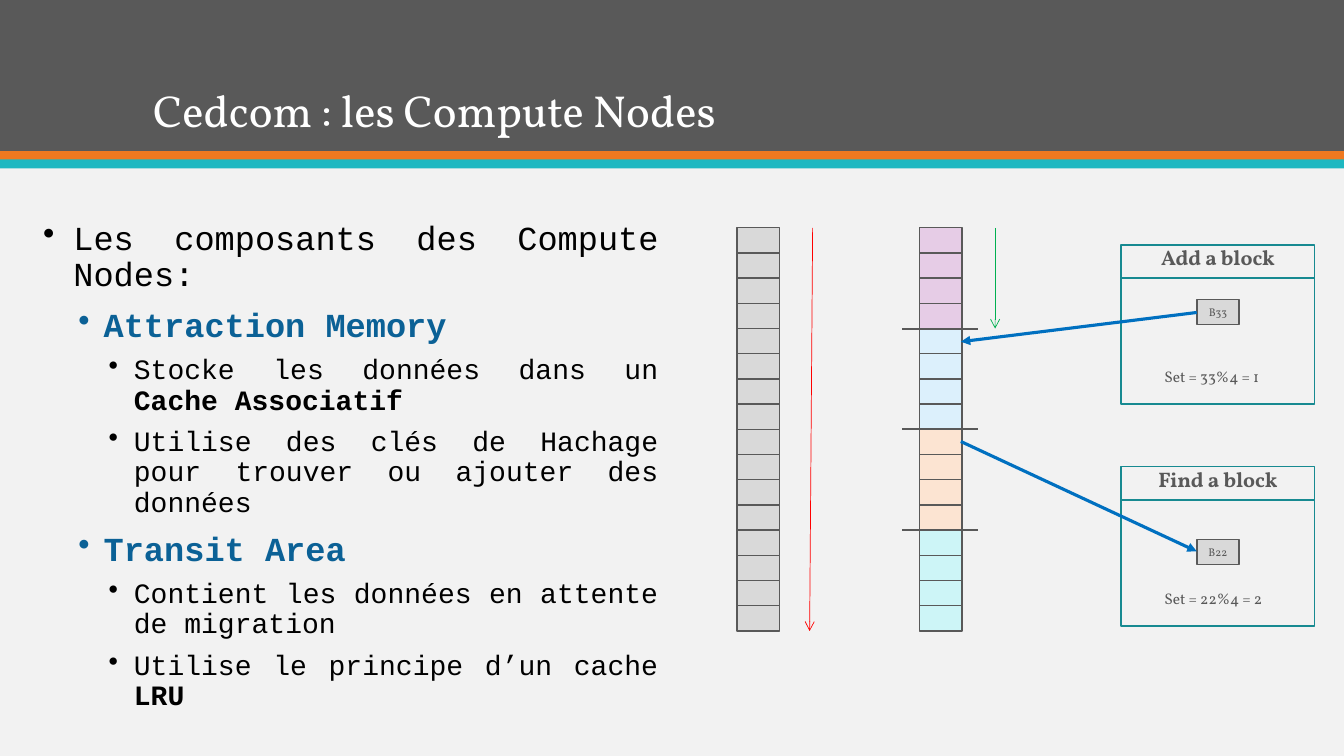
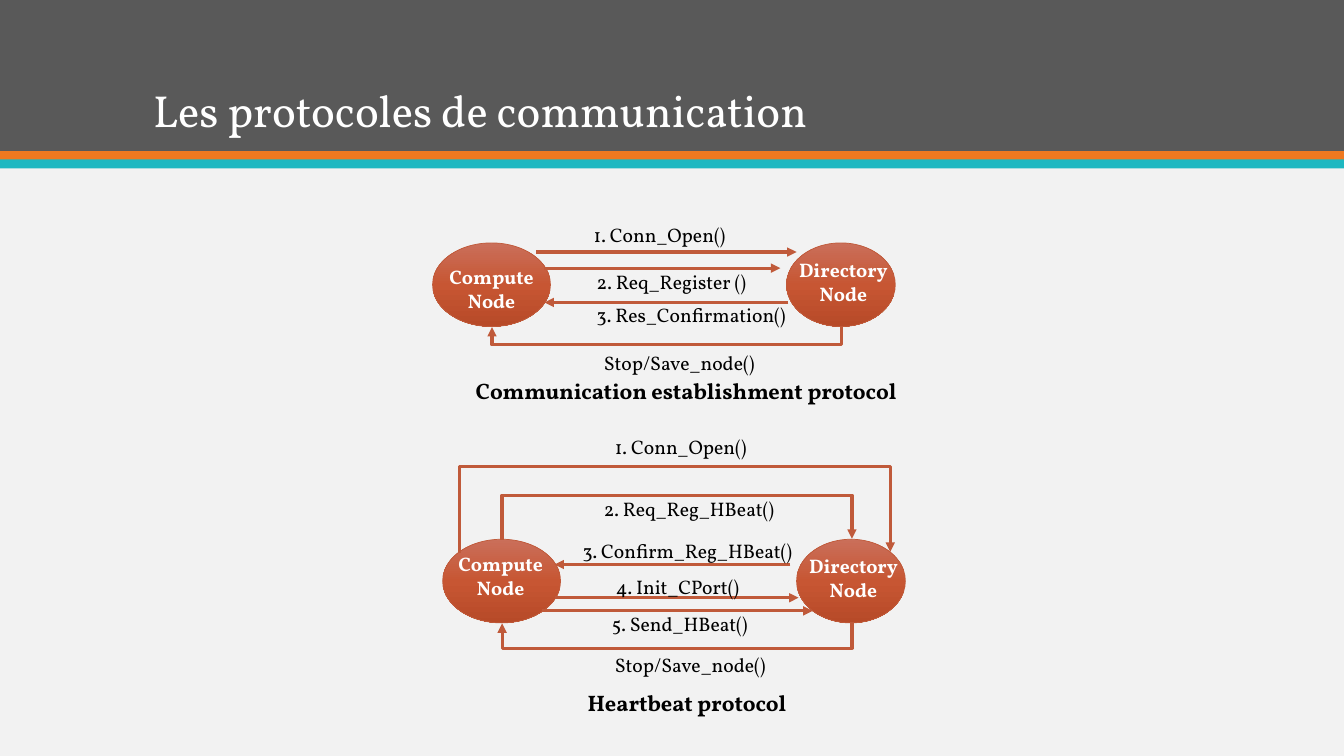
import copy
import dataclasses
import typing

import lxml.etree
import pptx
import pptx.dml.color
import pptx.enum.shapes
import pptx.enum.text
import pptx.oxml.ns
import pptx.util

Inches = pptx.util.Inches
Pt = pptx.util.Pt
RGB = pptx.dml.color.RGBColor.from_string
qn = pptx.oxml.ns.qn
SHAPE = pptx.enum.shapes.MSO_SHAPE
CONNECTOR = pptx.enum.shapes.MSO_CONNECTOR
ALIGN = pptx.enum.text.PP_ALIGN
ANCHOR = pptx.enum.text.MSO_ANCHOR
AUTO_SIZE = pptx.enum.text.MSO_AUTO_SIZE


@dataclasses.dataclass(frozen=True)
class Theme:
    serif: str = "Vollkorn"
    mono: str = "Courier New"
    page: str = "F2F2F2"
    grey: str = "595959"
    orange: str = "EF7920"
    turquoise: str = "1EB8C1"
    white: str = "FFFFFF"
    black: str = "000000"
    heading: str = "0B6196"
    cell: str = "D9D9D9"
    sets: tuple[str, ...] = ("E6CCE6", "DCF0FC", "FCE4D2", "CDF5F7")
    panel: str = "178A91"
    blue: str = "0070C0"
    red: str = "FF0000"
    green: str = "00B050"
    rust: str = "C05A3A"
    node: tuple[str, ...] = ("CA6F5A", "C75633", "B74A28")
    title_size: float = 32
    body_size: float = 24
    detail_size: float = 20
    caption_size: float = 16
    panel_size: float = 15
    label_size: float = 14
    formula_size: float = 11
    block_size: float = 8


T = Theme()


class Box(typing.NamedTuple):
    left: float
    top: float
    width: float
    height: float


class Point(typing.NamedTuple):
    x: float
    y: float


class Level(typing.NamedTuple):
    margin: float
    indent: float
    before: float
    size: float
    color: str


class Bullet(typing.NamedTuple):
    level: int
    text: str
    strong: str = ""


class Panel(typing.NamedTuple):
    top: float
    title: str
    block: str
    block_top: float
    formula: str
    start: Point
    end: Point


class Node(typing.NamedTuple):
    box: Box
    name: str
    text_left: float
    text_top: float


class Label(typing.NamedTuple):
    box: Box
    text: str


class Elbow(typing.NamedTuple):
    left: float
    right: float
    end_y: float
    run_y: float


def apply(target: typing.Any, values: dict[str, typing.Any]) -> None:
    for name, value in values.items():
        setattr(target, name, value)


def add_run(p: typing.Any, text: str, size: float, color: str, bold: bool, font: str) -> None:
    r = p.add_run()
    r.text = text
    apply(r.font, {"size": Pt(size), "bold": bold, "name": font})
    r.font.color.rgb = RGB(color)


def write(sp: typing.Any, text: str, size: float, color: str, bold: bool = False,
          align: typing.Any = ALIGN.LEFT, spacing: float = 1.0, **frame: typing.Any) -> None:
    tf = sp.text_frame
    apply(tf, frame)
    for i, line in enumerate(text.split("\n")):
        p = tf.add_paragraph() if i else tf.paragraphs[0]
        apply(p, {"alignment": align, "line_spacing": spacing})
        add_run(p, line, size, color, bold, T.serif)


def add_text(shapes: typing.Any, box: Box, text: str, size: float, color: str,
             **options: typing.Any) -> None:
    sp = shapes.add_textbox(*map(Inches, box))
    frame = {"word_wrap": False, "auto_size": AUTO_SIZE.SHAPE_TO_FIT_TEXT}
    write(sp, text, size, color, **(frame | options))


def add_shape(shapes: typing.Any, box: Box, fill: str | None, line: str | None = None,
              width: float = 1, kind: typing.Any = SHAPE.RECTANGLE) -> typing.Any:
    sp = shapes.add_shape(kind, *map(Inches, box))
    sp.shadow.inherit = False
    if fill:
        sp.fill.solid()
        sp.fill.fore_color.rgb = RGB(fill)
    else:
        sp.fill.background()
    if line:
        sp.line.color.rgb = RGB(line)
        sp.line.width = Pt(width)
    else:
        sp.line.fill.background()
    return sp


def add_line(shapes: typing.Any, start: Point, end: Point, color: str, width: float,
             tail: str = "", kind: typing.Any = CONNECTOR.STRAIGHT) -> typing.Any:
    c = shapes.add_connector(kind, *map(Inches, (*start, *end)))
    c.line.color.rgb = RGB(color)
    c.line.width = Pt(width)
    props = c._element.spPr
    if tail:
        lxml.etree.SubElement(props.find(qn("a:ln")), qn("a:tailEnd"), type=tail)
    lxml.etree.SubElement(props, qn("a:effectLst"))
    return c


def add_elbow(shapes: typing.Any, elbow: Elbow) -> None:
    thin, span = 0.01, elbow.right - elbow.left
    left = (elbow.left + elbow.right - thin) / 2
    top = elbow.end_y - span / 2
    c = add_line(shapes, Point(left, top), Point(left + thin, top + span),
                 T.rust, 2.25, "triangle", CONNECTOR.ELBOW)
    props = c._element.spPr
    turn = {"rot": "5400000"}
    if elbow.run_y < elbow.end_y:
        turn |= {"flipH": "1", "flipV": "1"}
    for name, value in turn.items():
        props.find(qn("a:xfrm")).set(name, value)
    bend = round(abs(elbow.run_y - elbow.end_y) / thin * 100000)
    guides = props.find(qn("a:prstGeom")).get_or_add_avLst()
    lxml.etree.SubElement(guides, qn("a:gd"), name="adj1", fmla=f"val {bend}")


def add_node(shapes: typing.Any, node: Node) -> None:
    group = shapes.add_group_shape().shapes
    sp = add_shape(group, node.box, T.node[0], T.rust, 0.5, SHAPE.OVAL)
    sp.fill.gradient()
    sp.fill.gradient_angle = 270
    stops = sp._element.spPr.find(".//" + qn("a:gsLst"))
    stops.insert(1, copy.deepcopy(stops[0]))
    for i, (stop, color) in enumerate(zip(sp.fill.gradient_stops, T.node)):
        stop.position = i / 2
        stop.color.rgb = RGB(color)
    add_text(group, Box(node.text_left, node.text_top, 2.25, 0.57), node.name + "\nNode",
             T.label_size, T.white, bold=True, align=ALIGN.CENTER, word_wrap=True)


def add_bullets(shapes: typing.Any, box: Box, bullets: list[Bullet]) -> None:
    levels = (Level(0.3, -0.3, 18, T.body_size, T.black),
              Level(0.6, -0.25, 10, T.body_size, T.heading),
              Level(0.9, -0.25, 8, T.detail_size, T.black))
    tf = shapes.add_textbox(*map(Inches, box)).text_frame
    tf.word_wrap = True
    for i, bullet in enumerate(bullets):
        level = levels[bullet.level]
        p = tf.add_paragraph() if i else tf.paragraphs[0]
        apply(p, {"alignment": ALIGN.JUSTIFY, "level": bullet.level,
                  "line_spacing": 0.9, "space_before": Pt(level.before)})
        props = p._p.get_or_add_pPr()
        props.set("marL", str(Inches(level.margin)))
        props.set("indent", str(Inches(level.indent)))
        lxml.etree.SubElement(props, qn("a:buChar"), char="•")
        for text, bold in ((bullet.text, bullet.level == 1), (bullet.strong, True)):
            if text:
                add_run(p, text, level.size, level.color, bold, T.mono)


def add_slide(prs: typing.Any, title: str) -> typing.Any:
    s = prs.slides.add_slide(prs.slide_layouts[6])
    for top, height, color in ((0, 1.5, T.grey), (1.5, 0.09, T.orange),
                               (1.58, 0.09, T.turquoise)):
        add_shape(s.shapes, Box(0, top, 13.33, height), color)
    add_text(s.shapes, Box(1.42, 0.28, 11.67, 1.13), title, T.title_size, T.white,
             spacing=0.9, vertical_anchor=ANCHOR.BOTTOM, word_wrap=True,
             auto_size=AUTO_SIZE.NONE)
    return s.shapes


def add_panel(shapes: typing.Any, panel: Panel) -> None:
    left, width, top = 11.12, 1.92, panel.top
    block = add_shape(shapes, Box(11.87, panel.block_top, 0.42, 0.25), T.cell, T.grey)
    write(block, panel.block, T.block_size, T.grey, align=ALIGN.CENTER,
          vertical_anchor=ANCHOR.MIDDLE, word_wrap=False)
    add_text(shapes, Box(11.45, top + 1.16, 1.25, 0.29), panel.formula,
             T.formula_size, T.grey)
    add_text(shapes, Box(left, top - 0.05, width, 0.35), panel.title, T.panel_size, T.grey,
             bold=True, align=ALIGN.CENTER, word_wrap=True)
    add_shape(shapes, Box(left, top, width, 1.58), None, T.panel)
    add_line(shapes, Point(left, top + 0.33), Point(left + width, top + 0.33), T.panel, 1.5)
    add_line(shapes, panel.start, panel.end, T.blue, 2.25, "triangle")


def build_compute_nodes(prs: typing.Any) -> None:
    shapes = add_slide(prs, "Cedcom : les Compute Nodes")
    add_bullets(shapes, Box(0.33, 2.15, 6.3, 4.66), [
        Bullet(0, "Les composants des Compute Nodes:"),
        Bullet(1, "Attraction Memory"),
        Bullet(2, "Stocke les données dans un ", "Cache Associatif "),
        Bullet(2, "Utilise des clés de Hachage pour trouver ou ajouter des données"),
        Bullet(1, "Transit Area"),
        Bullet(2, "Contient les données en attente de migration"),
        Bullet(2, "Utilise le principe d’un cache ", "LRU"),
    ])
    top, step, per_set = 2.26, 0.25, 4
    set_colors = [color for color in T.sets for _ in range(per_set)]
    for left, colors in ((7.31, [T.cell] * len(set_colors)), (9.12, set_colors)):
        for i, color in enumerate(colors):
            add_shape(shapes, Box(left, top + i * step, 0.42, step), color, T.grey)
    for i in range(1, len(T.sets)):
        y = top + i * per_set * step
        add_line(shapes, Point(8.95, y), Point(9.7, y), T.grey, 1.5)
    for panel in (
        Panel(2.43, "Add a block", "B33", 2.97, "Set = 33%4 = 1",
              Point(11.87, 3.1), Point(9.53, 3.39)),
        Panel(4.63, "Find a block", "B22", 5.35, "Set = 22%4 = 2",
              Point(9.53, 4.38), Point(11.87, 5.47)),
    ):
        add_panel(shapes, panel)
    add_line(shapes, Point(8.06, top), Point(8.03, 6.26), T.red, 0.5, "arrow")
    add_line(shapes, Point(9.87, top), Point(9.87, 3.26), T.green, 0.5, "arrow")


def build_protocols(prs: typing.Any) -> None:
    shapes = add_slide(prs, "Les protocoles de communication")
    for node in (Node(Box(4.29, 2.41, 1.17, 0.83), "Compute", 3.75, 2.58),
                 Node(Box(7.8, 2.41, 1.08, 0.83), "Directory", 7.24, 2.51),
                 Node(Box(4.39, 5.35, 1.17, 0.83), "Compute", 3.84, 5.43),
                 Node(Box(7.9, 5.35, 1.08, 0.83), "Directory", 7.34, 5.45)):
        add_node(shapes, node)
    for start, end, y in ((5.32, 7.9, 2.5), (5.4, 7.74, 2.66), (7.82, 5.4, 3),
                          (7.84, 5.5, 5.6), (5.5, 7.92, 5.93), (5.38, 8.06, 6.06)):
        add_line(shapes, Point(start, y), Point(end, y), T.rust, 2.25, "triangle")
    for elbow in (Elbow(4.88, 8.35, 3.24, 3.43), Elbow(4.56, 8.83, 5.48, 4.61),
                  Elbow(4.98, 8.45, 6.18, 6.44), Elbow(4.98, 8.45, 5.35, 4.9)):
        add_elbow(shapes, elbow)
    for label in (Label(Box(5.79, 2.16, 1.58, 0.34), "1. Conn_Open()"),
                  Label(Box(5.82, 2.63, 1.72, 0.34), "2. Req_Register ()"),
                  Label(Box(5.82, 2.96, 2.11, 0.34), "3. Res_Confirmation()"),
                  Label(Box(5.89, 3.43, 1.78, 0.34), "Stop/Save_node()"),
                  Label(Box(6, 4.27, 1.58, 0.34), "1. Conn_Open()"),
                  Label(Box(5.89, 4.88, 1.94, 0.34), "2. Req_Reg_HBeat()"),
                  Label(Box(5.68, 5.3, 2.33, 0.34), "3. Confirm_Reg_HBeat()"),
                  Label(Box(6.01, 5.65, 1.44, 0.34), "4. Init_CPort()"),
                  Label(Box(5.97, 6.02, 1.6, 0.34), "5. Send_HBeat()"),
                  Label(Box(6, 6.43, 1.78, 0.34), "Stop/Save_node()")):
        add_text(shapes, label.box, label.text, T.label_size, T.black)
    for caption in (Label(Box(4.62, 3.69, 4.43, 0.37), "Communication establishment protocol"),
                    Label(Box(5.73, 6.79, 2.2, 0.37), "Heartbeat protocol")):
        add_text(shapes, caption.box, caption.text, T.caption_size, T.black, bold=True)


def main() -> None:
    prs = pptx.Presentation()
    apply(prs, {"slide_width": Inches(13.33), "slide_height": Inches(7.5)})
    fill = prs.slide_master.background.fill
    fill.solid()
    fill.fore_color.rgb = RGB(T.page)
    build_compute_nodes(prs)
    build_protocols(prs)
    prs.save("out.pptx")


if __name__ == "__main__":
    main()
